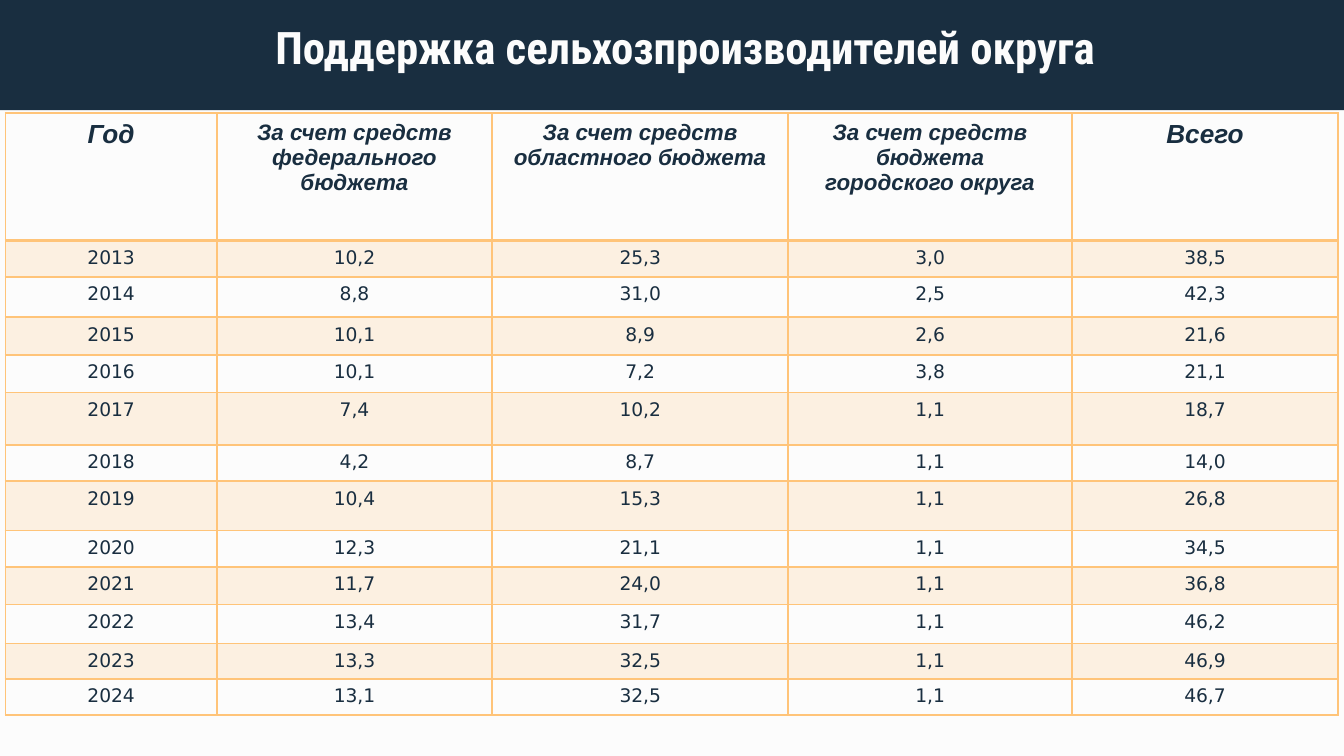
from pptx import Presentation
from pptx.dml.color import RGBColor
from pptx.enum.shapes import MSO_SHAPE
from pptx.enum.text import MSO_ANCHOR, MSO_AUTO_SIZE, PP_ALIGN
from pptx.oxml.ns import qn
from pptx.util import Pt
from lxml.etree import SubElement

NAVY = RGBColor(0x19, 0x2E, 0x40)
PAPER = RGBColor(0xFC, 0xFC, 0xFC)
AMBER = RGBColor(0xFF, 0xC4, 0x79)

HEADINGS = [
    ("Год", 14),
    ("За счет средств федерального бюджета", 12),
    ("За счет средств областного бюджета", 12),
    ("За счет средств бюджета\nгородского округа", 12),
    ("Всего", 14),
]
SUPPORT = [
    ("2013", "10,2", "25,3", "3,0", "38,5"),
    ("2014", "8,8", "31,0", "2,5", "42,3"),
    ("2015", "10,1", "8,9", "2,6", "21,6"),
    ("2016", "10,1", "7,2", "3,8", "21,1"),
    ("2017", "7,4", "10,2", "1,1", "18,7"),
    ("2018", "4,2", "8,7", "1,1", "14,0"),
    ("2019", "10,4", "15,3", "1,1", "26,8"),
    ("2020", "12,3", "21,1", "1,1", "34,5"),
    ("2021", "11,7", "24,0", "1,1", "36,8"),
    ("2022", "13,4", "31,7", "1,1", "46,2"),
    ("2023", "13,3", "32,5", "1,1", "46,9"),
    ("2024", "13,1", "32,5", "1,1", "46,7"),
]
COLUMN_WIDTHS = [113.3, 147.5, 158.6, 152, 142.6]
ROW_HEIGHTS = [68.4, 19.4, 21.6, 20.2, 20.2, 28.1, 19.4, 26.6, 19.4, 20.2, 20.9, 18.8, 19.4]


class SlideBuilder:
    heading_font = "Arial"
    figure_font = "DejaVu Sans"
    title_font = "Roboto Condensed"

    def __init__(self, slide):
        self.slide = slide
        slide.background.fill.solid()
        slide.background.fill.fore_color.rgb = PAPER

    def format_text(self, frame, font, size, color, bold=False, italic=False):
        for paragraph in frame.paragraphs:
            paragraph.alignment = PP_ALIGN.CENTER
            for run in paragraph.runs:
                run.font.name = font
                run.font.size = Pt(size)
                run.font.color.rgb = color
                run.font.bold = bold
                run.font.italic = italic

    def banner(self, left, top, width, height):
        banner = self.slide.shapes.add_shape(
            MSO_SHAPE.RECTANGLE, Pt(left), Pt(top), Pt(width), Pt(height))
        banner.shadow.inherit = False
        banner.fill.solid()
        banner.fill.fore_color.rgb = NAVY
        banner.line.fill.background()
        self.slide.shapes.title.element.addprevious(banner.element)

    def title(self, text, left, top, width, height):
        title = self.slide.shapes.title
        title.left, title.top = Pt(left), Pt(top)
        title.width, title.height = Pt(width), Pt(height)
        frame = title.text_frame
        frame.text = text
        frame.word_wrap = True
        frame.auto_size = MSO_AUTO_SIZE.NONE
        frame.vertical_anchor = MSO_ANCHOR.MIDDLE
        frame.margin_left = Pt(38)
        frame.margin_right = frame.margin_top = frame.margin_bottom = Pt(7.2)
        self.format_text(frame, self.title_font, 24, PAPER, bold=True)

    def cell_borders(self, cell, top, bottom):
        properties = cell._tc.get_or_add_tcPr()
        for side, width in (("L", 1), ("R", 1), ("T", top), ("B", bottom)):
            border = SubElement(properties, qn(f"a:ln{side}"), w=str(Pt(width)))
            fill = SubElement(border, qn("a:solidFill"))
            SubElement(fill, qn("a:srgbClr"), val=str(AMBER))

    def cell_fill(self, cell, banded):
        if not banded:
            cell.fill.background()
            return
        cell.fill.solid()
        cell.fill.fore_color.rgb = AMBER
        color = cell._tc.tcPr.find(qn("a:solidFill"))[0]
        SubElement(color, qn("a:alpha"), val="20000")

    def table(self, left, top):
        table = self.slide.shapes.add_table(
            len(ROW_HEIGHTS), len(COLUMN_WIDTHS), Pt(left), Pt(top),
            Pt(sum(COLUMN_WIDTHS)), Pt(sum(ROW_HEIGHTS))).table
        table.first_row = table.horz_banding = False
        for column, width in zip(table.columns, COLUMN_WIDTHS):
            column.width = Pt(width)
        for row, height in zip(table.rows, ROW_HEIGHTS):
            row.height = Pt(height)
        for cell, (heading, size) in zip(table.rows[0].cells, HEADINGS):
            cell.text_frame.text = heading
            self.format_text(cell.text_frame, self.heading_font, size, NAVY, True, True)
            self.cell_borders(cell, 1, 2)
            self.cell_fill(cell, False)
        for number, figures in enumerate(SUPPORT, 1):
            for cell, figure in zip(table.rows[number].cells, figures):
                cell.text_frame.text = figure
                self.format_text(cell.text_frame, self.figure_font, 10, NAVY)
                self.cell_borders(cell, 2 if number == 1 else 1, 1)
                self.cell_fill(cell, number % 2 == 1)


def main():
    presentation = Presentation()
    presentation.slide_width = Pt(720)
    presentation.slide_height = Pt(405)
    builder = SlideBuilder(presentation.slides.add_slide(presentation.slide_layouts[5]))
    builder.banner(-3.6, -7.2, 727.2, 66.2)
    builder.title("Поддержка сельхозпроизводителей округа", 2.9, -7.2, 697.7, 64.8)
    builder.table(2.9, 60.5)
    presentation.save("out.pptx")


if __name__ == "__main__":
    main()
